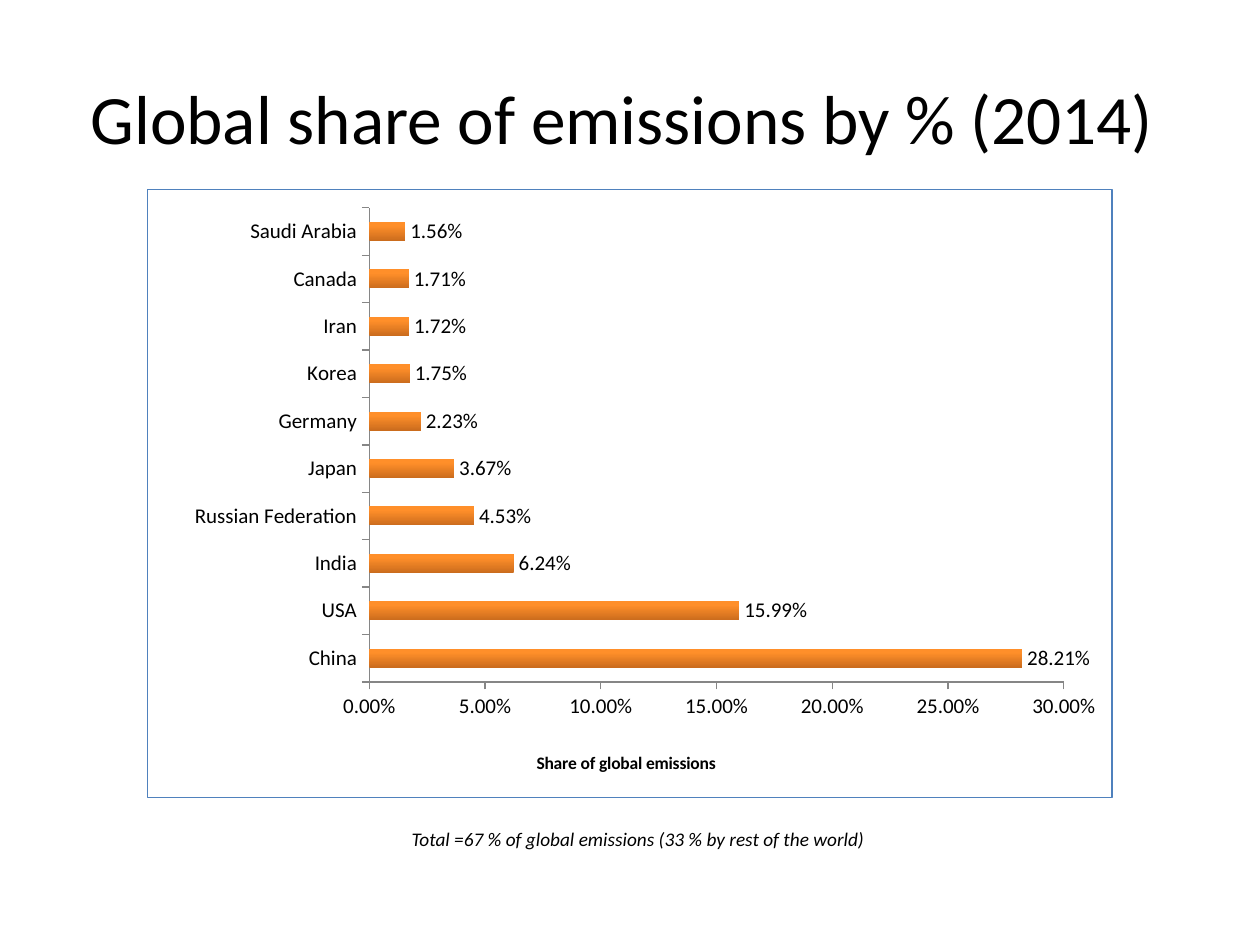
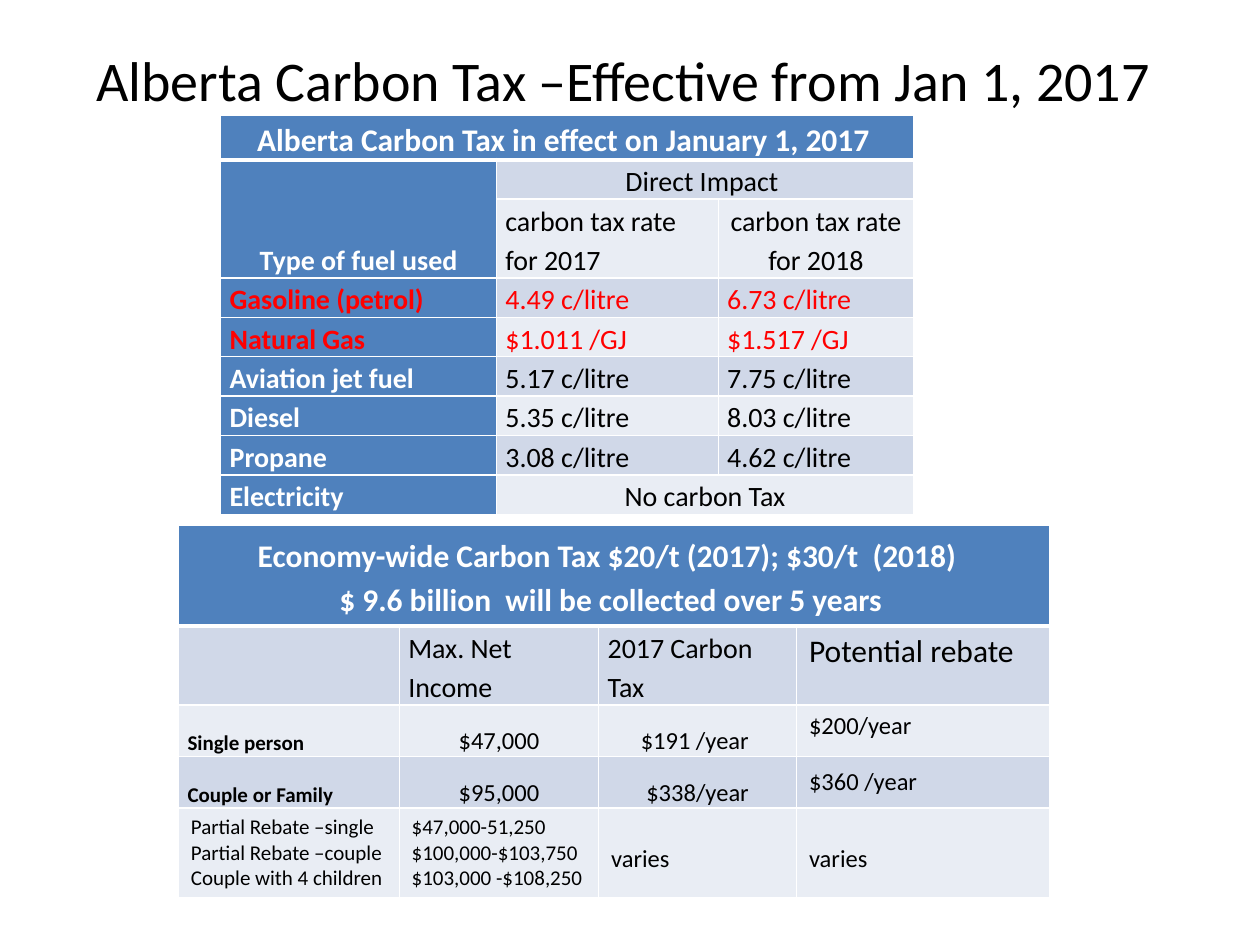
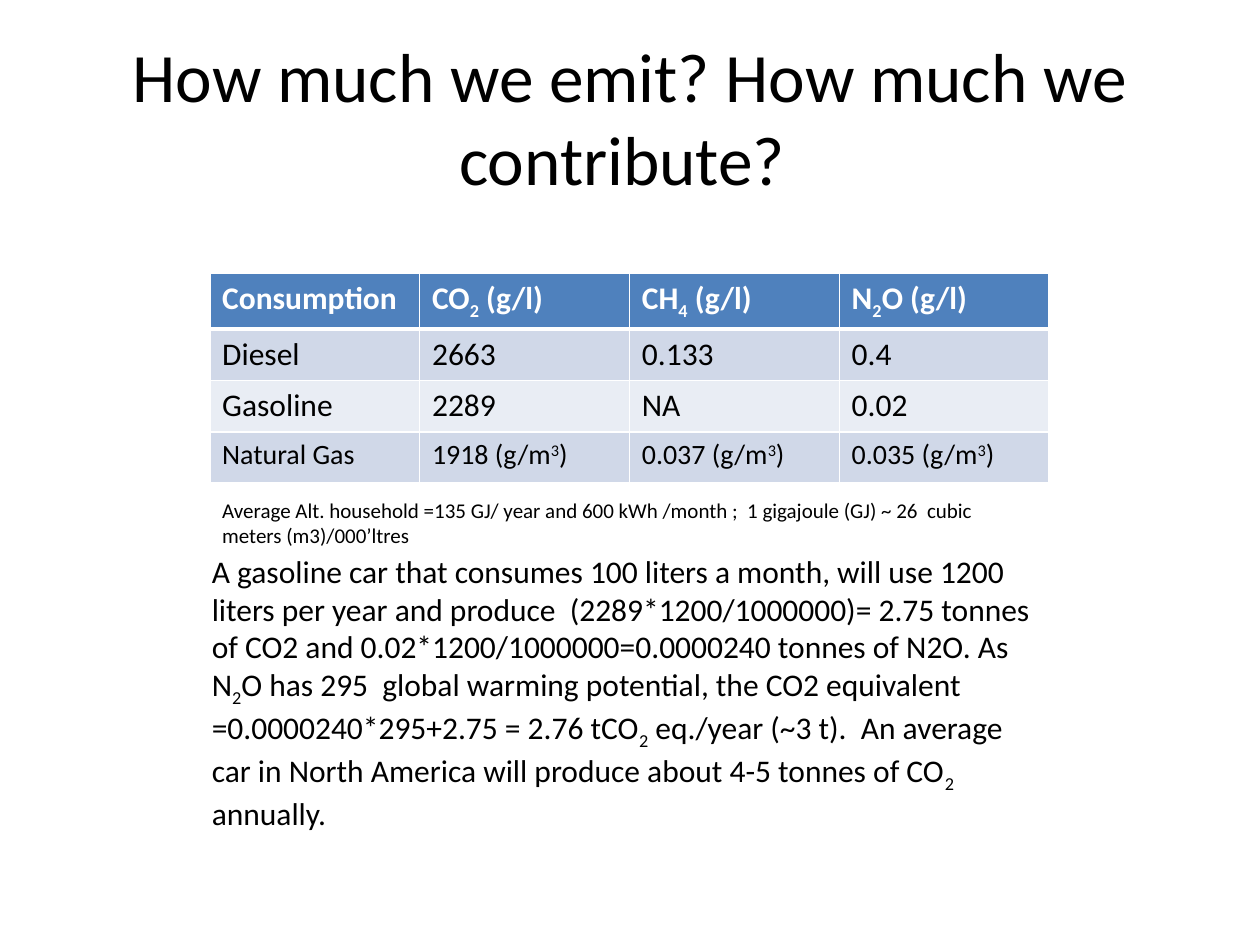
from lxml.etree import SubElement
from pptx import Presentation
from pptx.chart.data import CategoryChartData
from pptx.dml.color import RGBColor
from pptx.enum.chart import XL_CHART_TYPE, XL_LABEL_POSITION, XL_TICK_MARK
from pptx.enum.text import MSO_ANCHOR, MSO_AUTO_SIZE, PP_ALIGN
from pptx.oxml import parse_xml
from pptx.oxml.ns import nsdecls, qn
from pptx.util import Cm, Pt

FONT = "Calibri"
BLACK = RGBColor(0x00, 0x00, 0x00)
WHITE = RGBColor(0xFF, 0xFF, 0xFF)
RED = RGBColor(0xFF, 0x00, 0x00)
BLUE = RGBColor(0x4F, 0x81, 0xBD)
BAND_DARK = RGBColor(0xD0, 0xD8, 0xE8)
BAND_LIGHT = RGBColor(0xE9, 0xED, 0xF4)
AXIS_GREY = RGBColor(0x86, 0x86, 0x86)
BAR_SHADE = RGBColor(0xCB, 0x6C, 0x1D)
BAR_LIGHT = RGBColor(0xFF, 0x8F, 0x2A)

SUBSCRIPT, SUPERSCRIPT = -25, 30
CENTER = PP_ALIGN.CENTER
TITLE_BOX = (1.27, 0.76, 22.86, 3.18)


# Shared text and title
def style(font, size, color=BLACK, bold=False, italic=False):
    font.name, font.size = FONT, Pt(size)
    font.bold, font.italic = bold, italic
    font.color.rgb = color


def write(tf, text, size, color=BLACK, bold=False, italic=False,
          align=None, spacing=None, baseline=SUBSCRIPT):
    """Fill a frame: newlines part paragraphs, bars enclose raised or lowered text."""
    for i, line in enumerate(text.split("\n")):
        p = tf.add_paragraph() if i else tf.paragraphs[0]
        p.alignment, p.line_spacing = align, spacing
        for j, part in enumerate(line.split("|")):
            if not part:
                continue
            r = p.add_run()
            r.text = part
            style(r.font, size, color, bold, italic)
            if j % 2:
                r._r.get_or_add_rPr().set("baseline", str(baseline * 1000))


def place(sp, box):
    sp.left, sp.top, sp.width, sp.height = map(Cm, box)


def add_titled_slide(prs, title, size=39.6, box=TITLE_BOX):
    s = prs.slides.add_slide(prs.slide_layouts[5])
    place(s.shapes.title, box)
    tf = s.shapes.title.text_frame
    tf.vertical_anchor = MSO_ANCHOR.MIDDLE
    write(tf, title, size, align=CENTER)
    return s


def add_text(s, box, text, size, **look):
    tf = s.shapes.add_textbox(*map(Cm, box)).text_frame
    tf.word_wrap = True
    tf.auto_size = MSO_AUTO_SIZE.SHAPE_TO_FIT_TEXT
    write(tf, text, size, **look)


# Tables
def tight(text, size=16, **look):
    """Bottom-aligned cell with narrow margins and wide lines."""
    return dict(text=text, size=size, spacing=1.15, anchor=MSO_ANCHOR.BOTTOM,
                margins=(0.18, 0), **look)


def loose(text, size=18, **look):
    return dict(text=text, size=size, **look)


def head(text, **look):
    return dict(text=text, size=18, color=WHITE, bold=True, **look)


def set_borders(cell, top, bottom):
    tcPr = cell._tc.get_or_add_tcPr()
    for side, width in zip("LRTB", (1, 1, top, bottom)):
        ln = SubElement(tcPr, qn(f"a:ln{side}"), w=str(Pt(width)))
        fill = SubElement(ln, qn("a:solidFill"))
        SubElement(fill, qn("a:srgbClr"), val=str(WHITE))


def fill_cell(cell, text, size, anchor=MSO_ANCHOR.TOP, margins=(0.25, 0.13),
              drop=0, fill=None, **look):
    side, edge = margins
    cell.margin_left = cell.margin_right = Cm(side)
    cell.margin_top, cell.margin_bottom = Cm(edge + drop), Cm(edge)
    cell.vertical_anchor = anchor
    if fill is not None:
        cell.fill.fore_color.rgb = fill
    write(cell.text_frame, text, size, **look)


def add_grid(s, left, top, widths, heights, rows, spans=()):
    """Banded table; spans are (row, column, last row, last column)."""
    table = s.shapes.add_table(len(heights), len(widths), Cm(left), Cm(top),
                               Cm(sum(widths)), Cm(sum(heights))).table
    table.first_row = table.horz_banding = False
    for column, width in zip(table.columns, widths):
        column.width = Cm(width)
    for row, height in zip(table.rows, heights):
        row.height = Cm(height)
    for i, row in enumerate(rows):
        band = BLUE if i == 0 else BAND_DARK if i % 2 else BAND_LIGHT
        for j, content in enumerate(row):
            cell = table.cell(i, j)
            set_borders(cell, 3 if i == 1 else 1, 3 if i == 0 else 1)
            cell.fill.solid()
            cell.fill.fore_color.rgb = band
            if content:
                fill_cell(cell, **content)
    for r1, c1, r2, c2 in spans:
        table.cell(r1, c1).merge(table.cell(r2, c2))


# Emissions chart
def manual_layout(x, y, w=None, h=None):
    inner = '<c:layoutTarget val="inner"/>' if w else ""
    size = f'<c:w val="{w}"/><c:h val="{h}"/>' if w else ""
    return parse_xml(
        f'<c:layout {nsdecls("c")}><c:manualLayout>{inner}<c:xMode val="edge"/>'
        f'<c:yMode val="edge"/><c:x val="{x}"/><c:y val="{y}"/>{size}'
        '</c:manualLayout></c:layout>')


def set_layout(parent, layout, index):
    for old in parent.findall(qn("c:layout")):
        parent.remove(old)
    parent.insert(index, layout)


def add_emissions_chart(s, box, shares):
    data = CategoryChartData(number_format="0.00%")
    data.categories = list(shares)
    data.add_series("Series 1", list(shares.values()))
    chart = s.shapes.add_chart(XL_CHART_TYPE.BAR_CLUSTERED, *map(Cm, box), data).chart
    chart.has_legend = chart.has_title = False
    style(chart.font, 10)

    # Frame and plot area
    border = parse_xml(
        f'<c:spPr {nsdecls("c", "a")}><a:noFill/><a:ln w="{Pt(0.75)}"><a:solidFill>'
        f'<a:srgbClr val="{BLUE}"/></a:solidFill></a:ln></c:spPr>')
    chart._chartSpace.find(qn("c:chart")).addnext(border)
    plot_area = chart._chartSpace.find(qn("c:chart")).find(qn("c:plotArea"))
    set_layout(plot_area, manual_layout(0.23, 0.03, 0.72, 0.78), 0)

    # Bars and labels
    plot = chart.plots[0]
    plot.gap_width, plot.vary_by_categories = 150, False
    fill = plot.series[0].format.fill
    fill.gradient()
    fill.gradient_angle = 90
    stops = zip(fill.gradient_stops, (BAR_SHADE, BAR_LIGHT), (0, 0.8))
    for stop, color, position in stops:
        stop.color.rgb, stop.position = color, position
    plot.has_data_labels = True
    labels = plot.data_labels
    labels.show_value = True
    labels.position = XL_LABEL_POSITION.OUTSIDE_END
    labels.number_format, labels.number_format_is_linked = "0.00%", False
    style(labels.font, 12)

    # Axes
    for axis in (chart.category_axis, chart.value_axis):
        axis.has_major_gridlines = False
        axis.major_tick_mark = XL_TICK_MARK.OUTSIDE
        axis.minor_tick_mark = XL_TICK_MARK.NONE
        axis.format.line.color.rgb = AXIS_GREY
        style(axis.tick_labels.font, 12)
    axis = chart.value_axis
    axis.minimum_scale, axis.maximum_scale, axis.major_unit = 0, 0.3, 0.05
    axis.tick_labels.number_format = "0.00%"
    axis.tick_labels.number_format_is_linked = False
    write(axis.axis_title.text_frame, "Share of global emissions", 10, bold=True)
    set_layout(axis.axis_title._element, manual_layout(0.4, 0.92), 1)


# Slides
def build_emissions(prs):
    s = add_titled_slide(prs, "Global share of emissions by % (2014) ")
    shares = {"China": 0.2821, "USA": 0.1599, "India": 0.0624,
              "Russian Federation": 0.0453, "Japan": 0.0367, "Germany": 0.0223,
              "Korea": 0.0175, "Iran": 0.0172, "Canada": 0.0171,
              "Saudi Arabia": 0.0156}
    add_emissions_chart(s, (2.96, 3.81, 19.47, 12.28), shares)
    add_text(s, (8.05, 16.56, 11.63, 0.74),
             "Total =67 % of global emissions (33 % by rest of the world)", 11, italic=True)


def add_fuel_table(s, left, top):
    def fuel(name, *rates, color=None):
        return [tight(name, color=color or WHITE, bold=True, fill=BLUE),
                *(tight(rate, color=color or BLACK) for rate in rates)]

    rows = [
        [tight("Alberta Carbon Tax in effect on January 1, 2017 ", 18,
               color=WHITE, bold=True, align=CENTER), None, None],
        [tight("Type of fuel used", color=WHITE, bold=True, align=CENTER, fill=BLUE),
         tight("Direct Impact ", align=CENTER), None],
        [None, tight("carbon tax rate for 2017"),
         tight("carbon tax rate for 2018", align=CENTER)],
        fuel("Gasoline (petrol)", "4.49 c/litre", "6.73 c/litre", color=RED),
        fuel("Natural Gas", "$1.011 /GJ", "$1.517 /GJ", color=RED),
        fuel("Aviation jet fuel", "5.17 c/litre", "7.75 c/litre"),
        fuel("Diesel", "5.35 c/litre", "8.03 c/litre"),
        fuel("Propane", "3.08 c/litre", "4.62 c/litre"),
        fuel("Electricity") + [tight("No carbon Tax", align=CENTER), None],
    ]
    add_grid(s, left, top, (5.56, 4.47, 3.94), (0.61, 0.71, 1.12) + (0.71,) * 6, rows,
             spans=((0, 0, 0, 2), (1, 0, 2, 0), (1, 1, 1, 2), (8, 1, 8, 2)))


def add_rebate_table(s, left, top):
    def household(name, income, tax, rebate, **look):
        return [tight(name, 12, bold=True), tight(income, 14, align=CENTER),
                tight(tax, 14, align=CENTER), loose(rebate, 14, **look)]

    rows = [
        [head("Economy-wide Carbon Tax $20/t (2017); $30/t  (2018)  \n"
              "$ 9.6 billion  will be collected over 5 years ",
              align=CENTER, spacing=1.15), None, None, None],
        [None, tight("Max. Net Income"), tight("2017 Carbon Tax"),
         loose("Potential rebate")],
        household("Single person", "$47,000", "$191 /year ", "$200/year"),
        household("Couple or Family", "$95,000", "$338/year", "$360 /year", spacing=1.15),
        [loose("Partial Rebate –single\nPartial Rebate –couple\nCouple with 4 children", 12),
         loose("$47,000-51,250\n$100,000-$103,750\n$103,000 -$108,250", 12),
         *[loose("varies", 14, drop=0.6)] * 2],
    ]
    add_grid(s, left, top, (4.45, 4.02, 3.99, 5.11), (1.5,) + (1.04,) * 4, rows,
             spans=((0, 0, 0, 3),))


def build_carbon_tax(prs):
    left, _, width, height = TITLE_BOX
    s = add_titled_slide(prs, "Alberta Carbon Tax –Effective from Jan 1, 2017 ", 32,
                         (left, 0, width, height))
    add_fuel_table(s, 4.45, 2.33)
    add_rebate_table(s, 3.6, 10.58)


def build_contribution(prs):
    s = add_titled_slide(prs, "How much we emit? How much we contribute? ")
    rows = [
        [head(t) for t in ("Consumption", "CO|2| (g/l)", "CH|4| (g/l)", "N|2|O (g/l)")],
        [loose(t) for t in ("Diesel", "2663", "0.133", "0.4")],
        [loose(t) for t in ("Gasoline", "2289", "NA", "0.02")],
        [loose(t, 16, baseline=SUPERSCRIPT) for t in
         ("Natural Gas", "1918 (g/m|3|)", "0.037 (g/m|3|)", "0.035 (g/m|3|)")],
    ]
    add_grid(s, 4.23, 5.51, (4.23,) * 4, (1.03,) * 4, rows)
    add_text(s, (4.02, 11, 17.36, 5.64),
             "A gasoline car that consumes 100 liters a month, will use 1200 liters per "
             "year and produce  (2289*1200/1000000)= 2.75 tonnes of CO2 and "
             "0.02*1200/1000000=0.0000240 tonnes of N2O. As N|2|O has 295  global warming "
             "potential, the CO2 equivalent =0.0000240*295+2.75 = 2.76 tCO|2| eq./year "
             "(~3 t).  An average car in North America will produce about 4-5 tonnes of "
             "CO|2| annually.", 18)
    add_text(s, (4.23, 9.91, 16.72, 1.28),
             "Average Alt. household =135 GJ/ year and 600 kWh /month ;  1 gigajoule (GJ) "
             "~ 26  cubic meters (m3)/000’ltres", 12)


def main():
    prs = Presentation()
    prs.slide_width, prs.slide_height = Cm(25.4), Cm(19.05)
    build_emissions(prs)
    build_carbon_tax(prs)
    build_contribution(prs)
    prs.save("out.pptx")


if __name__ == "__main__":
    main()
